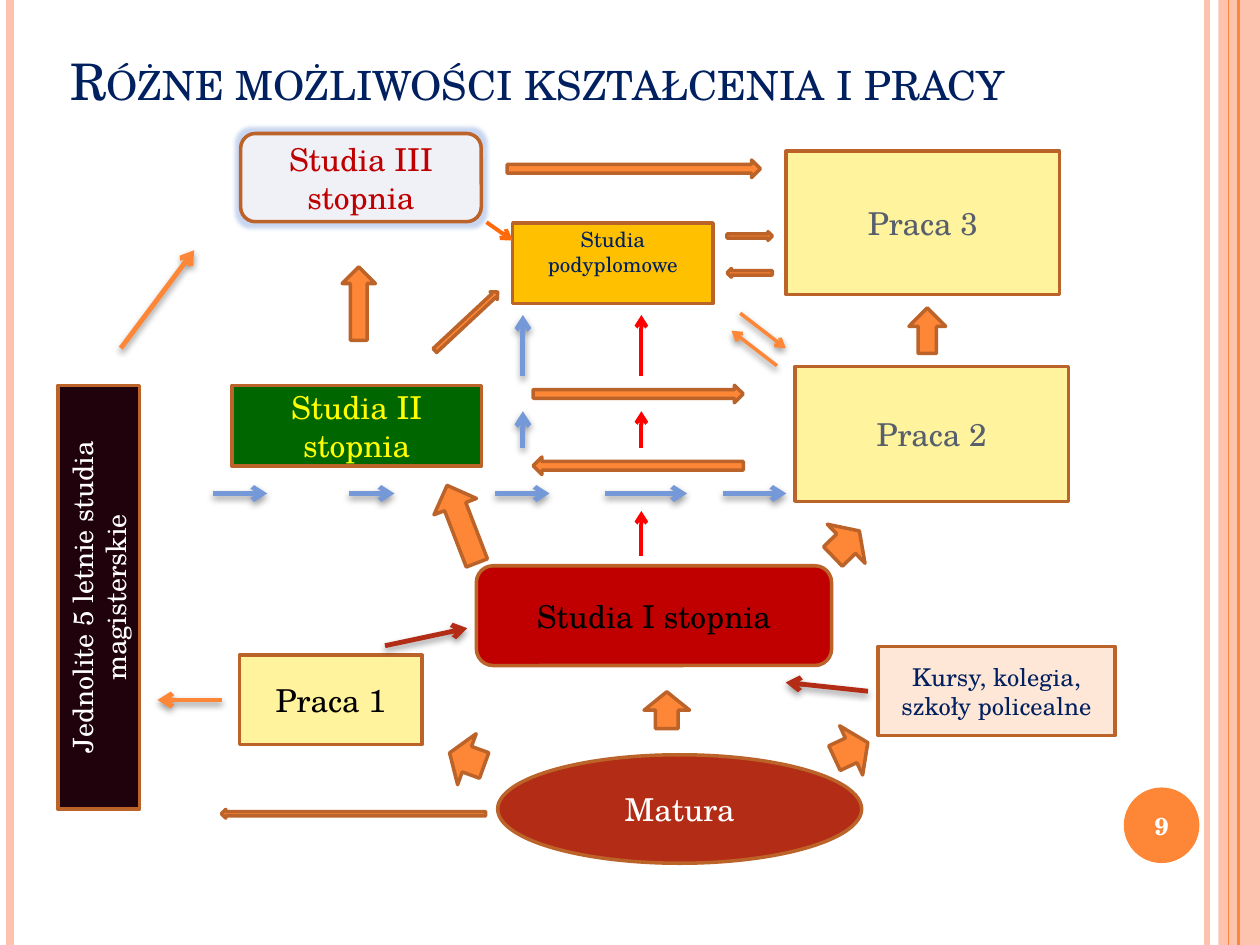
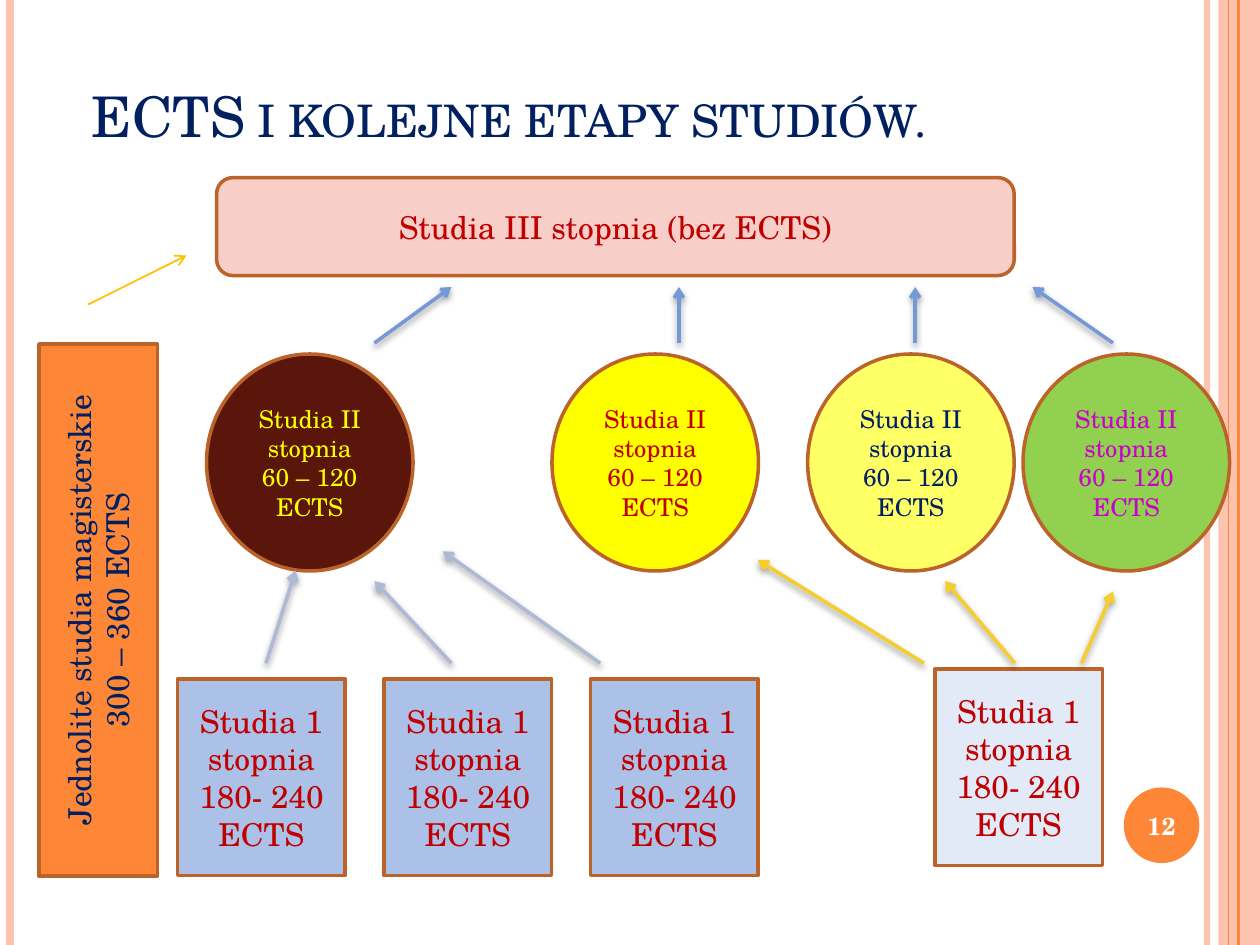
"""Builds two slides on study paths: ways of learning and working, and ECTS stages."""
from lxml import etree
from pptx import Presentation, util as u
from pptx.dml import color
from pptx.enum import shapes, text
from pptx.oxml import ns

FONT = "TeX Gyre Schola"
COLORS = {
    "white": "FFFFFF", "black": "000000", "navy": "002060", "grey": "575F6D",
    "pink": "FEC3AE", "orange": "FE8637", "bright orange": "FF6B0A", "outline": "BC6329",
    "brick": "B32C16", "crimson": "C00000", "red": "FF0000", "cream": "FFF39D",
    "peach": "FFE7D7", "green": "006600", "yellow": "FFFF00", "mist": "EFF1F7",
    "amber": "FFC000", "night": "20020D", "blue": "7598D9", "rose": "F8CFC8",
    "brown": "5A160B", "lemon": "FFFF66", "lime": "92D050", "violet": "CC00CC",
    "sky": "ACC1E8", "pale sky": "E3EAF7", "steel": "AEBAD5", "gold": "F5CD2D",
}
KINDS = {
    "box": shapes.MSO_SHAPE.RECTANGLE,
    "round": shapes.MSO_SHAPE.ROUNDED_RECTANGLE,
    "oval": shapes.MSO_SHAPE.OVAL,
    "arrow": shapes.MSO_SHAPE.RIGHT_ARROW,
}
WIDTH, HEIGHT = 720, 540
BANDS = [(689.8, "pink", 3), (5.8, "pink", 4.5), (707.8, "orange", 1.5), (702, "orange", 0.75)]
SIDE_BAND = (696.2, 0, 23.8, HEIGHT)
NUMBER_DISC = (642.2, 450, 43.2, 43.2)
TITLE_SIZE = (590, 52)

PATHS_TITLE = ("Różne możliwości kształcenia i pracy", 28.8, 33, 15)
PATHS_NODES = [
    ("oval", (284.4, 431.3, 208, 62), "brick", "Matura", "white", {}),
    ("box", (454.3, 209.5, 156.2, 77), "cream", "Praca 2", "grey", {}),
    ("round", (272.2, 323.3, 203, 57), "crimson", "Studia I stopnia", "black", {}),
    ("box", (136.8, 374.4, 104.4, 51), "cream", "Praca 1", "black", {}),
    ("box", (501.8, 369.4, 135.4, 51), "peach", "Kursy, kolegia,\nszkoły policealne", "navy",
     {"size": 14}),
    ("box", (449.3, 86.4, 156.2, 82), "cream", "Praca 3", "grey", {}),
    ("box", (132.5, 220.3, 142.6, 46), "green", "Studia II stopnia", "yellow", {}),
    ("round", (137.5, 76.3, 137.5, 50.4), "mist", "Studia III stopnia", "crimson", {"glow": True}),
    ("box", (293, 127.4, 114.5, 46), "amber", "Studia podyplomowe", "navy",
     {"size": 12, "vertical_anchor": text.MSO_ANCHOR.TOP, "margin_top": u.Pt(2)}),
    ("box", (33, 220.3, 46.8, 242), "night", "Jednolite 5 letnie studia magisterskie", "white",
     {"size": 16, "upward": True}),
]
UPWARD = [("Matura", "Studia I stopnia", 21, 26), ("Praca 2", "Praca 3", 26, 21),
          ("Studia II stopnia", "Studia III stopnia", 42, 19)]
ACROSS = [("Studia III stopnia", "Praca 3", 0.83, 10, {-18: 0}),
          ("Studia II stopnia", "Praca 2", 0.67, 10, {-20.5: 0, 20.5: 180}),
          ("Studia podyplomowe", "Praca 3", 0.62, 5, {-4: 0, 17: 180})]
STUBS = [(483.5, 310.7, 316), (266.8, 433.8, 200), (486.4, 428.8, 335)]
LONG_ARROWS = [(264, 299.5, 47.5, 26, 249), (266.4, 183.6, 49, 6, 317), (202, 465, 151, 5, 180)]
ROW = {121.7: 31, 199.4: 26, 283: 31, 345.6: 47, 413.3: 36}
COLUMN = {318: 292, 256: 235, 215: 180}
CLIMBS = [(x, start, x, end) for x in (366.5, 298.8) for start, end in COLUMN.items()]
PATHS_ARROWS = [
    ("brick", 2.75, True, [(220, 369, 267, 359), (496, 395, 449, 390)]),
    ("orange", 2.75, True, [(69, 199, 111, 143), (127, 400, 90, 400)]),
    ("blue", 2.75, True, [(x, 282, x + length, 282) for x, length in ROW.items()] + CLIMBS[4:]),
    ("orange", 2, True, [(423, 179, 449, 199), (444, 209, 418, 189)]),
    ("bright orange", 2.25, False, [(278, 127, 293, 137.5)]),
    ("red", 2.25, False, CLIMBS[:3]),
]

ECTS_TITLE = ("ECTS i kolejne etapy studiów.", 32, 45.4, 36.5)
CIRCLES = [(118, "brown", "yellow"), (315.4, "yellow", "crimson"),
           (461.5, "lemon", "navy"), (584.6, "lime", "violet")]
FIRST_BOXES = [(101.5 + 118 * i, 388, "sky") for i in range(3)] + [(534.2, 382.3, "pale sky")]
ECTS_NODES = [
    ("round", (123.8, 101.5, 455.8, 56), "rose", "Studia III stopnia (bez ECTS)", "crimson", {}),
    ("box", (22.3, 196.6, 67.7, 304), "orange", "Jednolite studia magisterskie\n300 – 360 ECTS",
     "navy", {"upward": True}),
    *[("oval", (left, 202.3, 118, 124), fill, "Studia II stopnia\n60 – 120\nECTS", ink,
       {"size": 14}) for left, fill, ink in CIRCLES],
    *[("box", (left, top, 95.8, 112.3), fill, "Studia 1 stopnia\n180- 240\nECTS", "crimson", {})
      for left, top, fill in FIRST_BOXES],
]
TO_CIRCLES = {
    "steel": [(152, 169, 326), (258, 214, 332), (343, 253, 315)],
    "gold": [(528, 433, 320), (580, 540, 332), (618, 636, 338)],
}
TO_THIRD_DEGREE = {214: 258, 388: 388, 523: 523, 636: 590}
ECTS_ARROWS = [
    *[(ink, 2, True, [(start, 379, end, top) for start, end, top in routes])
      for ink, routes in TO_CIRCLES.items()],
    ("blue", 2, True, [(start, 196, end, 164) for start, end in TO_THIRD_DEGREE.items()]),
    ("amber", 1, False, [(50.4, 174, 106.6, 146)]),
]


def points(values):
    return [u.Pt(value) for value in values]


def rgb(name):
    return color.RGBColor.from_string(COLORS[name])


def set_all(target, values):
    for name, value in values.items():
        setattr(target, name, value)


def add_xml(parent, tag, **attributes):
    values = {key: str(value) for key, value in attributes.items()}
    return etree.SubElement(parent, ns.qn(tag), values)


def add_effect(effects, tag, name, **attributes):
    effect = add_xml(effects, tag, **attributes)
    tint = add_xml(effect, "a:srgbClr", val=COLORS[name])
    add_xml(tint, "a:alpha", val="40%".replace("%", "000"))


def write(shape, content, ink, size=18, align=text.PP_ALIGN.CENTER, bold=False, **frame_values):
    frame = shape.text_frame
    set_all(frame, {"word_wrap": True, "vertical_anchor": text.MSO_ANCHOR.MIDDLE, **frame_values})
    frame.text = content
    for paragraph in frame.paragraphs:
        paragraph.alignment = align
        for run in paragraph.runs:
            set_all(run.font, {"name": FONT, "size": u.Pt(size), "bold": bold})
            run.font.color.rgb = rgb(ink)
    return frame


def add_shape(slide, kind, box, fill, outline=None):
    shape = slide.shapes.add_shape(KINDS[kind], *points(box))
    shape.shadow.inherit = False
    shape.fill.solid()
    shape.fill.fore_color.rgb = rgb(fill)
    if outline:
        shape.line.color.rgb = rgb(outline)
        shape.line.width = u.Pt(2)
    else:
        shape.line.fill.background()
    return shape


def add_line(slide, ends, ink, width, head=False, shadow=False):
    line = slide.shapes.add_connector(shapes.MSO_CONNECTOR.STRAIGHT, *points(ends))
    line.line.color.rgb = rgb(ink)
    line.line.width = u.Pt(width)
    properties = line._element.spPr
    if head:
        add_xml(properties.find(ns.qn("a:ln")), "a:tailEnd", type="arrow")
    effects = add_xml(properties, "a:effectLst")
    if shadow:
        add_effect(effects, "a:outerShdw", "black", blurRad=u.Pt(4), dist=u.Pt(2), dir=5400000)


def add_node(slide, kind, box, fill, content, ink, options):
    shape = add_shape(slide, kind, box, fill, "outline")
    extras = ("upward", "glow")
    frame = write(shape, content, ink,
                  **{key: value for key, value in options.items() if key not in extras})
    if options.get("upward"):
        frame._txBody.bodyPr.set("vert", "vert270")
    if options.get("glow"):
        effects = shape._element.spPr.find(ns.qn("a:effectLst"))
        add_effect(effects, "a:glow", "blue", rad=u.Pt(5))


def add_block_arrow(slide, x, y, length, thickness, angle):
    box = (x - length / 2, y - thickness / 2, length, thickness)
    add_shape(slide, "arrow", box, "orange", "outline").rotation = angle


def add_path_arrows(slide):
    boxes = {content: box for _, box, _, content, _, _ in PATHS_NODES}
    for lower, upper, length, thickness in UPWARD:
        (left, top, width, _), (other, start, span, height) = boxes[lower], boxes[upper]
        x = (left + width / 2 + other + span / 2) / 2
        add_block_arrow(slide, x, (top + start + height) / 2, length, thickness, 270)
    for first, second, share, thickness, lanes in ACROSS:
        (left, top, width, height), (right, start, _, depth) = boxes[first], boxes[second]
        gap = right - left - width
        y = (top + height / 2 + start + depth / 2) / 2
        for offset, angle in lanes.items():
            add_block_arrow(slide, right - gap / 2, y + offset, gap * share, thickness, angle)
    for x, y, angle in STUBS:
        add_block_arrow(slide, x, y, 21, 31, angle)
    for arrow in LONG_ARROWS:
        add_block_arrow(slide, *arrow)


def build_slide(presentation, number, title, nodes, arrows):
    slide = presentation.slides.add_slide(presentation.slide_layouts[6])
    add_shape(slide, "box", SIDE_BAND, "pink")
    for x, ink, width in BANDS:
        add_line(slide, (x, 0, x, HEIGHT), ink, width)
    disc = add_shape(slide, "oval", NUMBER_DISC, "orange")
    write(disc, number, "white", 14, bold=True, margin_left=0, margin_right=0)

    content, size, left, top = title
    heading = slide.shapes.add_textbox(*points((left, top, *TITLE_SIZE)))
    frame = write(heading, content, "navy", size, text.PP_ALIGN.LEFT,
                  vertical_anchor=text.MSO_ANCHOR.BOTTOM)
    frame.paragraphs[0].runs[0].font._element.set("cap", "small")

    for node in nodes:
        add_node(slide, *node)
    for ink, width, shadow, routes in arrows:
        for ends in routes:
            add_line(slide, ends, ink, width, True, shadow)
    return slide


def main():
    presentation = Presentation()
    set_all(presentation, {"slide_width": u.Pt(WIDTH), "slide_height": u.Pt(HEIGHT)})
    paths = build_slide(presentation, "9", PATHS_TITLE, PATHS_NODES, PATHS_ARROWS)
    add_path_arrows(paths)
    build_slide(presentation, "12", ECTS_TITLE, ECTS_NODES, ECTS_ARROWS)
    presentation.save("out.pptx")


if __name__ == "__main__":
    main()
